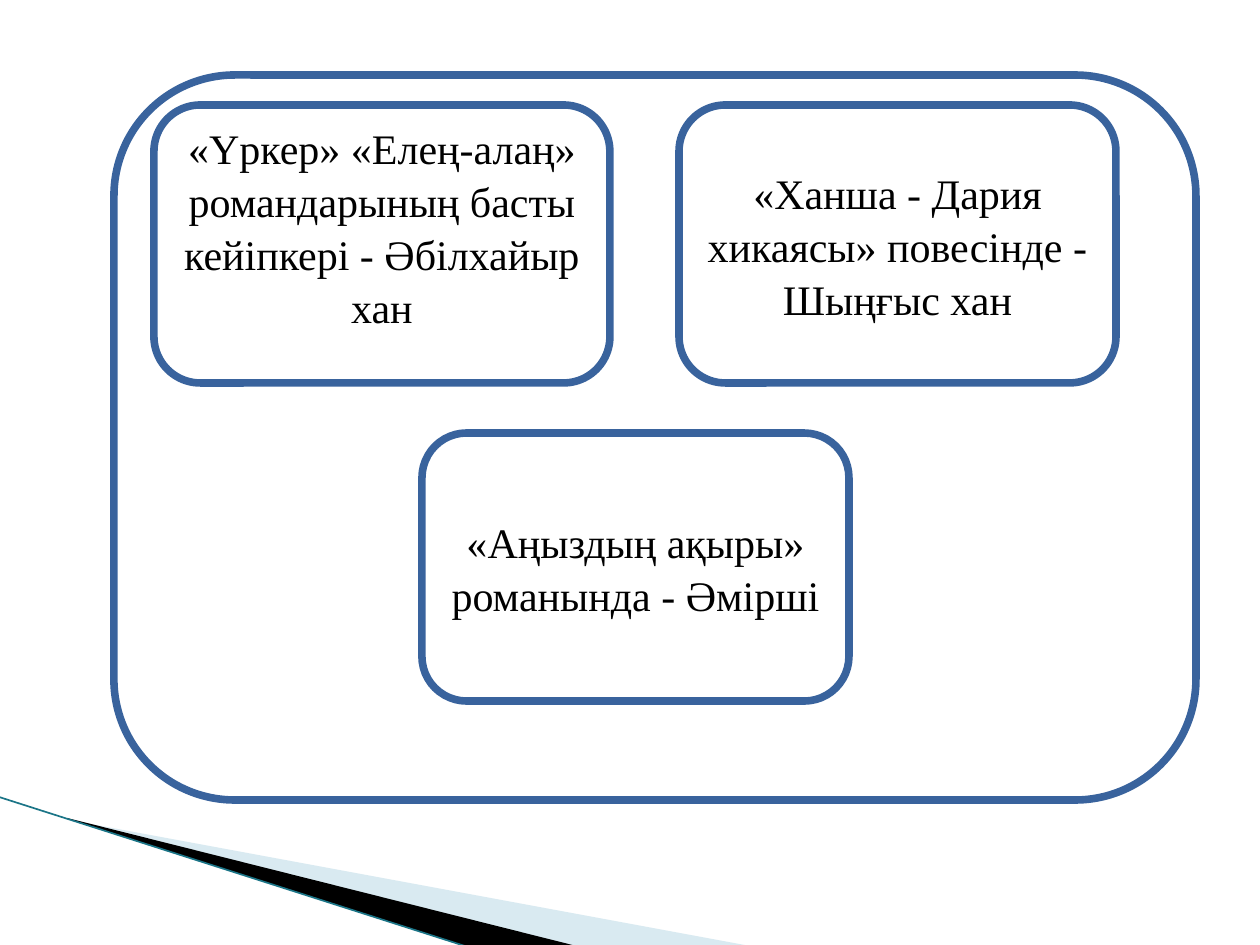
from lxml.etree import SubElement
from pptx import Presentation
from pptx.dml.color import RGBColor
from pptx.enum.shapes import MSO_CONNECTOR, MSO_SHAPE
from pptx.enum.text import MSO_ANCHOR, PP_ALIGN
from pptx.oxml.ns import qn
from pptx.util import Pt

PX = 914400 / 126
COLORS = {
    "paper": "FFFFFF",
    "border": "39639D",
    "ink": "000000",
    "pale": "A0CBDC",
    "teal": "1B7587",
}


def color(name):
    return RGBColor.from_string(COLORS[name])


def write(shape, text, size=24, font="Times New Roman", fill="ink", bottom=6):
    frame = shape.text_frame
    frame.word_wrap = True
    frame.vertical_anchor = MSO_ANCHOR.MIDDLE
    frame.margin_bottom = round(bottom * PX)
    para = frame.paragraphs[0]
    para.alignment = PP_ALIGN.CENTER
    para.line_spacing = 1.05
    span = para.add_run()
    span.text = text
    span.font.size = Pt(size)
    span.font.name = font
    span.font.color.rgb = color(fill)


deck = Presentation()
deck.slide_width = round(1260 * PX)
deck.slide_height = round(945 * PX)
page = deck.slides.add_slide(deck.slide_layouts[6])

wedges = [
    ("pale", 40, [(69, 820), (750, 946), (575, 946), (69, 819)]),
    ("ink", 100, [(67, 818), (576, 946), (469, 947), (68, 819)]),
]
for fill, opacity, points in wedges:
    builder = page.shapes.build_freeform(*points[0], scale=PX)
    builder.add_line_segments(points[1:], close=True)
    wedge = builder.convert_to_shape()
    wedge.shadow.inherit = False
    wedge.fill.solid()
    wedge.fill.fore_color.rgb = color(fill)
    wedge.line.fill.background()
    if opacity < 100:
        tint = wedge.fill._xPr.find(qn("a:solidFill"))[0]
        SubElement(tint, qn("a:alpha"), val=str(opacity * 1000))

edge = page.shapes.add_connector(
    MSO_CONNECTOR.STRAIGHT, *[round(value * PX) for value in (-1, 797, 468, 947)]
)
edge.line.color.rgb = color("teal")
edge.line.width = Pt(0.95)
SubElement(edge._element.spPr, qn("a:effectLst"))

panels = [
    ((114, 75, 1082, 725), None, 6),
    ((154, 105, 456, 278),
     "«Үркер» «Елең-алаң» романдарының басты кейіпкері - Әбілхайыр хан", 42),
    ((679, 105, 437, 278),
     "«Ханша - Дария хикаясы» повесінде - Шыңғыс хан", 6),
    ((422, 433, 427, 268), "«Аңыздың ақыры» романында - Әмірші", 6),
]
for place, text, bottom in panels:
    box = page.shapes.add_shape(
        MSO_SHAPE.ROUNDED_RECTANGLE, *[round(value * PX) for value in place]
    )
    box.shadow.inherit = False
    box.fill.solid()
    box.fill.fore_color.rgb = color("paper")
    box.line.color.rgb = color("border")
    box.line.width = Pt(4.33)
    if text:
        write(box, text, bottom=bottom)

deck.save("out.pptx")
